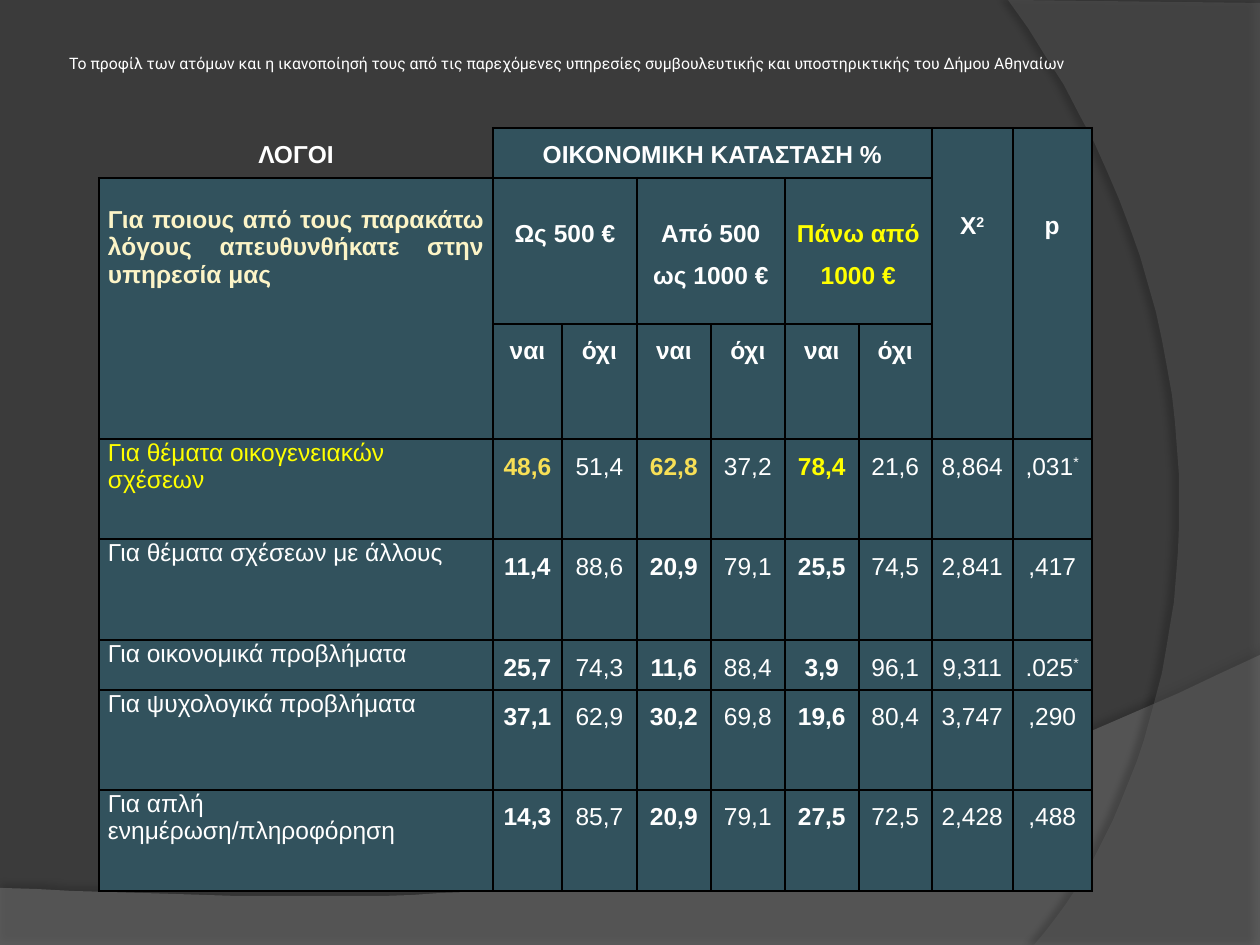
from lxml.etree import SubElement
from pptx import Presentation
from pptx.dml.color import RGBColor
from pptx.enum.text import MSO_ANCHOR as Anchor, PP_ALIGN as Align
from pptx.oxml.ns import qn
from pptx.util import Pt

SCALE = 914400 / 126
THEME = {
    "background": "3B3B3B", "cell": "32525D", "border": "000000",
    "white": "FFFFFF", "cream": "FCF4C7", "gold": "F7DF56", "yellow": "FFFF00",
    "title_font": "Roboto", "title_size": 9,
    "table_font": "Arial", "table_size": 14,
}


def px(length):
    return round(length * SCALE)


def curve_points(start, control_1, control_2, end, steps=40):
    """Points along a cubic Bézier curve, without its start."""
    points = []
    for step in range(1, steps + 1):
        t = step / steps
        weights = ((1 - t) ** 3, 3 * t * (1 - t) ** 2, 3 * t * t * (1 - t), t ** 3)
        corners = (start, control_1, control_2, end)
        points.append(tuple(round(sum(w * c[axis] for w, c in zip(weights, corners)))
                            for axis in (0, 1)))
    return points


presentation = Presentation()
presentation.slide_width, presentation.slide_height = px(1260), px(945)
slide = presentation.slides.add_slide(presentation.slide_layouts[6])
slide.background.fill.solid()
slide.background.fill.fore_color.rgb = RGBColor.from_string(THEME["background"])

# Background waves: straight corners, curve, fill, opacity %, shadow (opacity %, distance, angle)
waves = [
    ([(0, 888), (0, 945), (1260, 945), (1260, 655)],
     [(704, 919), (493, 906), (0, 888)], "7F7F7F", 45, (35, 3.5, 270)),
    ([(1260, 3), (1260, 945), (1034, 945)],
     [(1178, 780), (1283, 378), (1008, 0)], "5E5E5E", 40, (45, 4, 180)),
]
for corners, curve, color, opacity, (shadow_opacity, distance, angle) in waves:
    builder = slide.shapes.build_freeform(*corners[0], scale=SCALE)
    builder.add_line_segments(corners[1:] + curve_points(corners[-1], *curve), close=True)
    shape = builder.convert_to_shape()
    shape.fill.solid()
    shape.fill.fore_color.rgb = RGBColor.from_string(color)
    shape.line.fill.background()
    shape.shadow.inherit = False
    properties = shape.element.spPr
    fill_color = properties.find(qn("a:solidFill"))[0]
    SubElement(fill_color, qn("a:alpha"), val=str(opacity * 1000))
    shadow = SubElement(properties.find(qn("a:effectLst")), qn("a:outerShdw"),
                        blurRad=str(Pt(4)), dist=str(Pt(distance)), dir=str(angle * 60000))
    shadow_color = SubElement(shadow, qn("a:srgbClr"), val="000000")
    SubElement(shadow_color, qn("a:alpha"), val=str(shadow_opacity * 1000))

title = slide.shapes.add_textbox(px(63), px(38), px(1029), px(70))
title_frame = title.text_frame
title_frame.word_wrap = True
title_frame.vertical_anchor = Anchor.MIDDLE
title_frame.margin_left = title_frame.margin_right = title_frame.margin_top = px(6)
title_frame.margin_bottom = px(25)
title_frame.text = ("Το προφίλ των ατόμων και η ικανοποίησή τους από τις παρεχόμενες υπηρεσίες "
                    "συμβουλευτικής και υποστηρικτικής του Δήμου Αθηναίων")
title_font = title_frame.paragraphs[0].runs[0].font
title_font.name, title_font.size = THEME["title_font"], Pt(THEME["title_size"])
title_font.color.rgb = RGBColor.from_string(THEME["white"])

# A "^" starts the superscript
rows = [
    ["ΛΟΓΟΙ", "ΟΙΚΟΝΟΜΙΚΗ ΚΑΤΑΣΤΑΣΗ %", "", "", "", "", "", "Χ^2", "p"],
    ["Για ποιους από τους παρακάτω λόγους απευθυνθήκατε στην υπηρεσία μας",
     "Ως 500 €", "", "Από 500 ως 1000 €", "", "Πάνω από 1000 €", "", "", ""],
    ["", *["ναι", "όχι"] * 3, "", ""],
    ["Για θέματα οικογενειακών σχέσεων",
     "48,6", "51,4", "62,8", "37,2", "78,4", "21,6", "8,864", ",031^*"],
    ["Για θέματα σχέσεων με άλλους",
     "11,4", "88,6", "20,9", "79,1", "25,5", "74,5", "2,841", ",417"],
    ["Για οικονομικά προβλήματα",
     "25,7", "74,3", "11,6", "88,4", "3,9", "96,1", "9,311", ".025^*"],
    ["Για ψυχολογικά προβλήματα",
     "37,1", "62,9", "30,2", "69,8", "19,6", "80,4", "3,747", ",290"],
    ["Για απλή ενημέρωση/πληροφόρηση",
     "14,3", "85,7", "20,9", "79,1", "27,5", "72,5", "2,428", ",488"],
]
column_widths = [394, 69, 75, 74, 74, 74, 73, 81, 79]
row_heights = [50, 146, 114, 100, 101, 50, 100, 101]
# Merged cells: top row, left column, row span, column span
merges = [(0, 1, 1, 6), (0, 7, 3, 1), (0, 8, 3, 1), (1, 0, 2, 1),
          (1, 1, 1, 2), (1, 3, 1, 2), (1, 5, 1, 2)]
text_colors = {(1, 0): "cream", (1, 5): "yellow", (3, 0): "yellow",
               (3, 1): "gold", (3, 3): "gold", (3, 5): "yellow"}
top_margins = {(0, 7): 71, (0, 8): 71, (1, 0): 28, (1, 1): 29, (1, 3): 29, (1, 5): 29}
thick_columns, thick_rows = {0, 1, 7, 8, 9}, {0, 1, 3, 8}

table = slide.shapes.add_table(len(rows), len(column_widths), px(99), px(128),
                               px(sum(column_widths)), px(sum(row_heights))).table
table.first_row = table.horz_banding = False
for column, width in zip(table.columns, column_widths):
    column.width = px(width)
for row, height in zip(table.rows, row_heights):
    row.height = px(height)

owners = {}
for top, left, row_span, column_span in merges:
    table.cell(top, left).merge(table.cell(top + row_span - 1, left + column_span - 1))
    for r in range(top, top + row_span):
        for c in range(left, left + column_span):
            owners[r, c] = (top, left)

for r, row_texts in enumerate(rows):
    for c, text in enumerate(row_texts):
        cell = table.cell(r, c)
        owner = owners.get((r, c), (r, c))
        cell.margin_left = cell.margin_right = px(9)
        cell.margin_top, cell.margin_bottom = px(top_margins.get((r, c), 0)), 0

        sides = [("L", (r, c - 1), c in thick_columns),
                 ("R", (r, c + 1), c + 1 in thick_columns),
                 ("T", (r - 1, c), r in thick_rows),
                 ("B", (r + 1, c), r + 1 in thick_rows)]
        for side, neighbour, thick in sides:
            line = SubElement(cell._tc.get_or_add_tcPr(), qn(f"a:ln{side}"),
                              w=str(Pt(1.5 if thick else 1)))
            inside_merge = owners.get(neighbour, neighbour) == owner
            open_corner = (r, c) == (0, 0) and side in "LT"
            if inside_merge or open_corner:
                SubElement(line, qn("a:noFill"))
            else:
                line_fill = SubElement(line, qn("a:solidFill"))
                SubElement(line_fill, qn("a:srgbClr"), val=THEME["border"])

        if (r, c) == (0, 0):
            cell.fill.background()
        else:
            cell.fill.solid()
            cell.fill.fore_color.rgb = RGBColor.from_string(THEME["cell"])
        if not text:
            continue

        main_text, _, superscript = text.partition("^")
        paragraph = cell.text_frame.paragraphs[0]
        paragraph.text = main_text
        if superscript:
            raised_run = paragraph.add_run()
            raised_run.text = superscript
            raised_run._r.get_or_add_rPr().set("baseline", "30000")
        if c == 0 and r > 0:
            paragraph.alignment = Align.JUSTIFY if r == 1 else Align.LEFT
        else:
            paragraph.alignment = Align.CENTER
            paragraph.line_spacing = 1.5
        for run in paragraph.runs:
            run.font.name, run.font.size = THEME["table_font"], Pt(THEME["table_size"])
            run.font.bold = r < 3 or c in (1, 3, 5)
            run.font.color.rgb = RGBColor.from_string(THEME[text_colors.get((r, c), "white")])

presentation.save("out.pptx")
